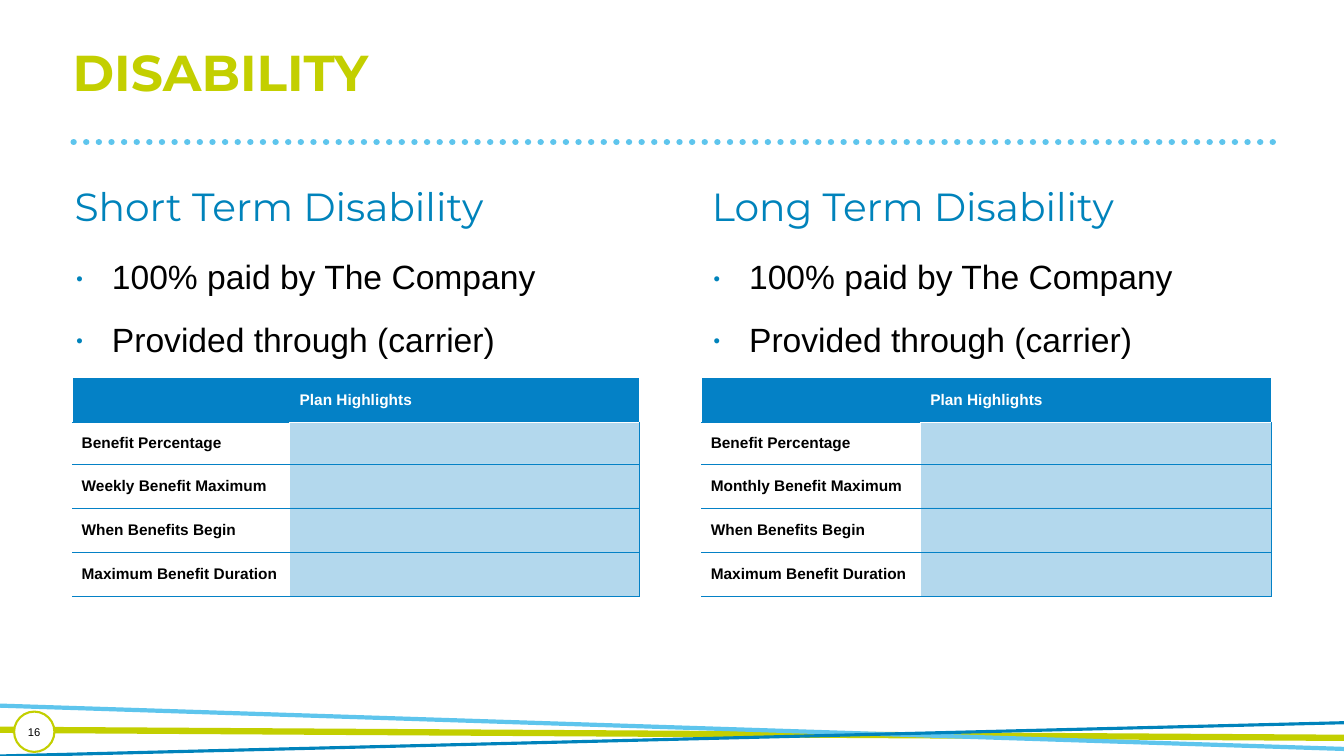
from lxml import etree
from pptx import Presentation
from pptx.dml.color import RGBColor
from pptx.enum.dml import MSO_LINE
from pptx.enum.shapes import MSO_CONNECTOR, MSO_SHAPE
from pptx.enum.text import MSO_ANCHOR, MSO_AUTO_SIZE, PP_ALIGN
from pptx.oxml import parse_xml
from pptx.oxml.ns import nsdecls, qn
from pptx.util import Inches, Pt

LIME, SKY, OCEAN, BLUE = "C3CF00", "5EC5ED", "0083BB", "0481C6"
WHITE, BLACK = "FFFFFF", "000000"


def color(hex_code):
    return RGBColor.from_string(hex_code)


def write(paragraph, text, size, font, hex_code, bold=False):
    run = paragraph.add_run()
    run.text = text
    run.font.size = Pt(size)
    run.font.name = font
    run.font.bold = bold
    run.font.color.rgb = color(hex_code)


prs = Presentation()
prs.slide_width, prs.slide_height = Inches(13.33), Inches(7.5)
slide = prs.slides.add_slide(prs.slide_layouts[4])
shapes = slide.shapes
title, left_heading, left_list, right_heading, right_list = slide.placeholders

# Dotted rule under the title and the three crossing footer lines
for x1, y1, x2, y2, hex_code, width in [
    (0.73, 1.41, 12.66, 1.41, SKY, 4.5),
    (-0.01, 7.24, 13.33, 7.32, LIME, 4.5),
    (13.33, 7.43, -0.01, 7, SKY, 3),
    (-0.01, 7.5, 13.33, 7.17, OCEAN, 2.25),
]:
    rule = shapes.add_connector(MSO_CONNECTOR.STRAIGHT, Inches(x1), Inches(y1),
                                Inches(x2), Inches(y2))
    rule.line.color.rgb = color(hex_code)
    rule.line.width = Pt(width)
    if y1 == y2:
        rule.line.dash_style = MSO_LINE.ROUND_DOT
        rule.line._get_or_add_ln().set("cap", "rnd")
    etree.SubElement(rule._element.spPr, qn("a:effectLst"))

# Places of the title, headings and lists
for holder, x, y, width, height in [
    (title, 0.62, 0.43, 12.03, 0.79),
    (left_heading, 0.64, 1.76, 5.7, 0.73),
    (right_heading, 6.96, 1.76, 5.7, 0.73),
    (left_list, 0.64, 2.49, 5.7, 4.24),
    (right_list, 6.96, 2.49, 5.7, 3.43),
]:
    holder.left, holder.top = Inches(x), Inches(y)
    holder.width, holder.height = Inches(width), Inches(height)
    holder.text_frame.auto_size = MSO_AUTO_SIZE.NONE
    holder.text_frame.vertical_anchor = MSO_ANCHOR.TOP

heading = title.text_frame.paragraphs[0]
heading.alignment = PP_ALIGN.LEFT
heading.line_spacing = 0.9
write(heading, "DISABILITY", 36, "Montserrat", LIME, True)

# One column for each kind of disability cover
for term, period, term_heading, term_list, x, column_widths in [
    ("Short", "Weekly", left_heading, left_list, 0.72, (2.15, 3.47)),
    ("Long", "Monthly", right_heading, right_list, 6.96, (2.17, 3.48)),
]:
    subtitle = term_heading.text_frame.paragraphs[0]
    subtitle.space_before = Pt(0)
    write(subtitle, f"{term} Term Disability", 28, "Montserrat", OCEAN)

    # Bulleted facts
    facts = term_list.text_frame
    for i, fact in enumerate(["100% paid by The Company", "Provided through (carrier)"]):
        item = facts.add_paragraph() if i else facts.paragraphs[0]
        item.space_before, item.space_after = Pt(10 if i else 0), Pt(6)
        bullet = item._p.get_or_add_pPr()
        bullet.set("marL", str(Inches(0.37)))
        bullet.set("indent", str(-Inches(0.37)))
        bullet_color = etree.SubElement(bullet, qn("a:buClr"))
        etree.SubElement(bullet_color, qn("a:srgbClr"), val=OCEAN)
        etree.SubElement(bullet, qn("a:buFont"), typeface="Montserrat")
        etree.SubElement(bullet, qn("a:buChar"), char="•")
        write(item, fact, 24, "Arial", BLACK)

    # Plan table
    labels = ["Plan Highlights", "Benefit Percentage", f"{period} Benefit Maximum",
              "When Benefits Begin", "Maximum Benefit Duration"]
    plan = shapes.add_table(len(labels), 2, Inches(x), Inches(3.75),
                            Inches(sum(column_widths)), Inches(2.17)).table
    plan.first_row = plan.horz_banding = False
    for column, width in zip(plan.columns, column_widths):
        column.width = Inches(width)
    plan.cell(0, 0).merge(plan.cell(0, 1))

    for r, label in enumerate(labels):
        plan.rows[r].height = Inches(0.41 if r == 1 else 0.44)
        for c in range(2):
            cell = plan.cell(r, c)
            is_value = r > 0 and c == 1
            cell.vertical_anchor = MSO_ANCHOR.MIDDLE
            cell.margin_left = cell.margin_right = Inches(0.09)
            cell.margin_top = cell.margin_bottom = Inches(0.04 if r else 0.05)

            # Borders come before the fill in the cell properties
            edges = {"T": BLUE, "B": BLUE}
            if c == 1:
                edges = {"R": BLUE, **edges}
            if is_value:
                edges = {"L": BLUE, **edges}
                if r == 1:
                    edges["T"] = WHITE
            for side, hex_code in edges.items():
                cell._tc.get_or_add_tcPr().append(parse_xml(
                    f'<a:ln{side} {nsdecls("a")} w="{Pt(0.25)}"><a:solidFill>'
                    f'<a:srgbClr val="{hex_code}"/></a:solidFill></a:ln{side}>'))

            cell.fill.solid()
            cell.fill.fore_color.rgb = color(BLUE if r == 0 or is_value else WHITE)
            if is_value:
                tint = cell._tc.tcPr.find(qn("a:solidFill")).find(qn("a:srgbClr"))
                etree.SubElement(tint, qn("a:alpha"), val="30000")

        name = plan.cell(r, 0).text_frame.paragraphs[0]
        name.alignment = PP_ALIGN.LEFT if r else PP_ALIGN.CENTER
        write(name, label, 11, "Arial", BLACK if r else WHITE, True)

# Page number badge
badge = shapes.add_shape(MSO_SHAPE.OVAL, Inches(0.14), Inches(7.06), Inches(0.4), Inches(0.4))
badge.shadow.inherit = False
badge.fill.solid()
badge.fill.fore_color.rgb = color(WHITE)
badge.line.color.rgb = color(LIME)
badge.line.width = Pt(1.5)
page = badge.text_frame
page.margin_left = page.margin_right = page.margin_top = page.margin_bottom = 0
page.vertical_anchor = MSO_ANCHOR.MIDDLE
page.paragraphs[0].alignment = PP_ALIGN.CENTER
write(page.paragraphs[0], "16", 8, "Arial", BLACK)

prs.save("out.pptx")
